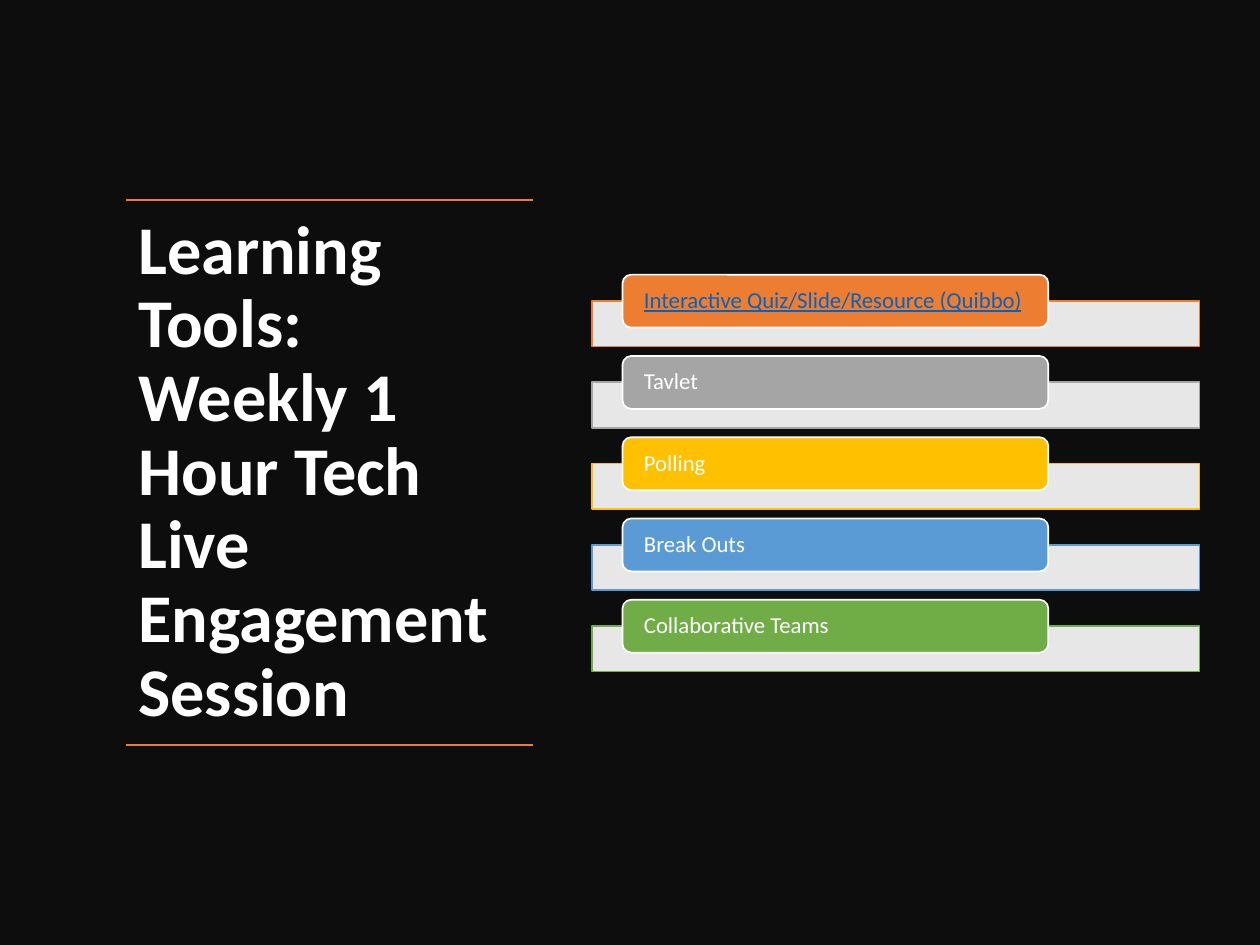
from lxml import etree
from pptx import Presentation
from pptx.dml.color import RGBColor
from pptx.enum.shapes import MSO_CONNECTOR, MSO_SHAPE
from pptx.enum.text import MSO_ANCHOR, PP_ALIGN
from pptx.oxml.ns import qn
from pptx.util import Inches, Pt

RECTANGLE = MSO_SHAPE.RECTANGLE
ROUNDED = MSO_SHAPE.ROUNDED_RECTANGLE
STRAIGHT = MSO_CONNECTOR.STRAIGHT
MIDDLE = MSO_ANCHOR.MIDDLE
LEFT = PP_ALIGN.LEFT

TOOLS = [
    ("Interactive Quiz/Slide/Resource (Quibbo)", "ED7D31"),
    ("Tavlet", "A5A5A5"),
    ("Polling", "FFC000"),
    ("Break Outs", "5B9BD5"),
    ("Collaborative Teams", "70AD47"),
]
FIRST_TOP = 2.18
ROW_STEP = 0.645


def color(hex_code):
    return RGBColor.from_string(hex_code)


def add_panel(kind, left, top, width, height, fill, outline=None):
    """Add a shadowless filled shape, with a 1 pt outline if a colour is given."""
    panel = page.shapes.add_shape(
        kind, Inches(left), Inches(top), Inches(width), Inches(height))
    panel.shadow.inherit = False
    panel.fill.solid()
    panel.fill.fore_color.rgb = color(fill)
    if outline:
        panel.line.color.rgb = color(outline)
        panel.line.width = Pt(1)
    else:
        panel.line.fill.background()
    return panel


deck = Presentation()
deck.slide_width = Inches(10)
deck.slide_height = Inches(7.5)
page = deck.slides.add_slide(deck.slide_layouts[6])

add_panel(RECTANGLE, 0, 0, 10, 7.5, "0D0D0D")

# Title between two rules
title = page.shapes.add_textbox(Inches(1), Inches(1.59), Inches(3.23), Inches(4.33))
title.text_frame.word_wrap = True
title.text_frame.vertical_anchor = MIDDLE
para = title.text_frame.paragraphs[0]
para.text = "Learning Tools: Weekly 1 Hour Tech Live Engagement Session"
para.line_spacing = 0.9
para.font.name = "Calibri"
para.font.size = Pt(39)
para.font.bold = True
para.font.color.rgb = color("FFFFFF")

for y in (1.59, 5.91):
    rule = page.shapes.add_connector(
        STRAIGHT, Inches(4.23), Inches(y), Inches(1), Inches(y))
    rule.line.color.rgb = color("ED7D31")
    rule.line.width = Pt(1)
    etree.SubElement(rule.element.spPr, qn("a:effectLst"))

# One bar and one overlapping label for each tool
for index, (tool, accent) in enumerate(TOOLS):
    top = FIRST_TOP + index * ROW_STEP
    bar = add_panel(RECTANGLE, 4.7, top + 0.21, 4.82, 0.36, "FFFFFF", accent)
    bar_color = bar.element.spPr.find(qn("a:solidFill"))[0]
    etree.SubElement(bar_color, qn("a:alpha"), val="90000")

    label = add_panel(ROUNDED, 4.94, top, 3.38, 0.42, accent, "FFFFFF")
    frame = label.text_frame
    frame.word_wrap = True
    frame.vertical_anchor = MIDDLE
    frame.margin_left = frame.margin_right = Inches(0.15)
    frame.margin_top = frame.margin_bottom = 0
    para = frame.paragraphs[0]
    para.text = tool
    para.alignment = LEFT
    para.line_spacing = 0.9
    para.font.name = "Calibri"
    para.font.size = Pt(13)
    para.font.underline = index == 0
    para.font.color.rgb = color("0563C1" if index == 0 else "FFFFFF")

deck.save("out.pptx")
